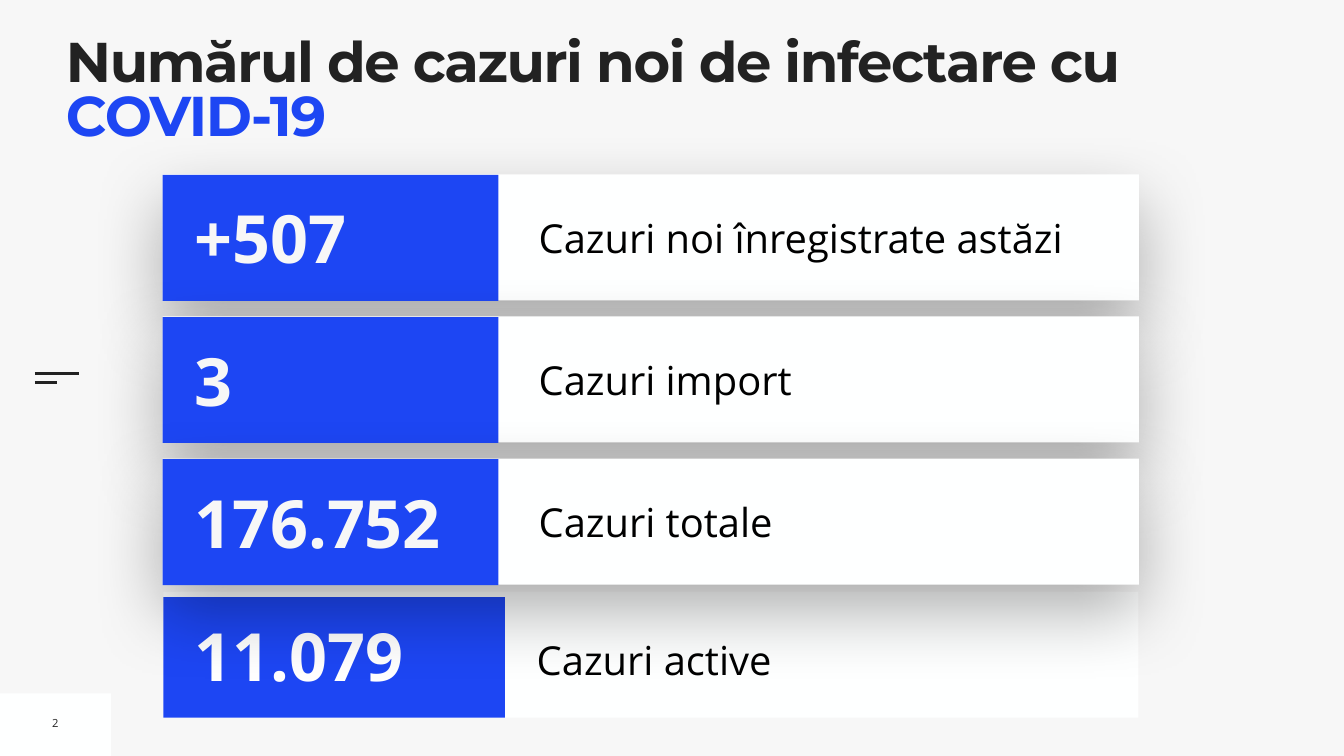
from dataclasses import dataclass

from lxml import etree
from pptx import Presentation
from pptx.dml.color import RGBColor
from pptx.enum.shapes import MSO_CONNECTOR, MSO_SHAPE
from pptx.enum.text import MSO_ANCHOR, MSO_AUTO_SIZE, PP_ALIGN
from pptx.oxml.ns import qn
from pptx.util import Emu, Pt

PX = 9144  # 100 px to the inch
RECT = MSO_SHAPE.RECTANGLE
STRAIGHT = MSO_CONNECTOR.STRAIGHT
MIDDLE, TOP = MSO_ANCHOR.MIDDLE, MSO_ANCHOR.TOP
GROW, FIXED = MSO_AUTO_SIZE.SHAPE_TO_FIT_TEXT, MSO_AUTO_SIZE.NONE
CENTER = PP_ALIGN.CENTER

COLORS = {
    "background": "F7F7F7",
    "white": "FFFFFF",
    "panel": "FEFFFF",
    "blue": "1D46F3",
    "dark": "222222",
    "black": "000000",
}
SHADOW = {"blurRad": Pt(100), "dist": Pt(40), "dir": 90 * 60000,
          "algn": "ctr", "rotWithShape": 0}
SHADOW_ALPHA = 30000


@dataclass(frozen=True)
class Box:
    left: int
    top: int
    width: int
    height: int

    def emu(self) -> list[Emu]:
        return [Emu(n * PX) for n in (self.left, self.top, self.width, self.height)]


@dataclass(frozen=True)
class Style:
    font: str
    size: int
    color: str
    bold: bool = False


@dataclass(frozen=True)
class CaseRow:
    value: str
    label: str
    panel: Box
    value_panel: Box
    value_box: Box
    label_box: Box
    value_color: str = "background"
    shadow: bool = True
    label_margin: int = 10
    label_format: tuple = ()


def rgb(name: str) -> RGBColor:
    return RGBColor.from_string(COLORS[name])


def add_panel(slide, box: Box, color: str, shadow: bool = False) -> None:
    panel = slide.shapes.add_shape(RECT, *box.emu())
    panel.shadow.inherit = False
    panel.fill.solid()
    panel.fill.fore_color.rgb = rgb(color)
    panel.line.fill.background()
    if shadow:
        effects = panel._element.spPr.find(qn("a:effectLst"))
        outer = etree.SubElement(effects, qn("a:outerShdw"),
                                 {key: str(int(v)) if key != "algn" else v
                                  for key, v in SHADOW.items()})
        tint = etree.SubElement(outer, qn("a:srgbClr"), val=COLORS["black"])
        etree.SubElement(tint, qn("a:alpha"), val=str(SHADOW_ALPHA))


def add_text(slide, box: Box, runs: list[tuple[str, Style]], margin: int = 10,
             anchor=MIDDLE, fit=GROW, wrap: bool = True,
             paragraph_format: tuple = (), spacing: int = 0) -> None:
    frame = slide.shapes.add_textbox(*box.emu()).text_frame
    inset = Emu(margin * PX)
    frame_format = {"word_wrap": wrap, "auto_size": fit, "vertical_anchor": anchor,
                    "margin_left": inset, "margin_right": inset,
                    "margin_top": inset, "margin_bottom": inset}
    for name, setting in frame_format.items():
        setattr(frame, name, setting)
    paragraph = frame.paragraphs[0]
    for name, setting in paragraph_format:
        setattr(paragraph, name, setting)
    for words, style in runs:
        run = paragraph.add_run()
        run.text = words
        font_format = {"name": style.font, "size": Pt(style.size), "bold": style.bold}
        for name, setting in font_format.items():
            setattr(run.font, name, setting)
        run.font.color.rgb = rgb(style.color)
        if spacing:
            run.font._element.set("spc", str(spacing * 100))


def add_rule(slide, left: int, right: int, y: int) -> None:
    rule = slide.shapes.add_connector(
        STRAIGHT, *[Emu(n * PX) for n in (left, y, right, y)])
    rule.line.color.rgb = rgb("dark")
    rule.line.width = Pt(3)
    etree.SubElement(rule._element.spPr, qn("a:effectLst"))


def standard_row(index: int, value: str, label: str) -> CaseRow:
    left, top = 323, 346 + 282 * index
    return CaseRow(value, label,
                   panel=Box(left, top, 1937, 250),
                   value_panel=Box(left, top + 1, 666, 250),
                   value_box=Box(left + 53, top + 35, 603, 180),
                   label_box=Box(left + 736, top + 67, 1176, 116))


def add_case_row(slide, row: CaseRow) -> None:
    add_panel(slide, row.panel, "panel", row.shadow)
    add_text(slide, row.label_box, [(row.label, Style("Open Sans", 57, "black"))],
             margin=row.label_margin, paragraph_format=row.label_format)
    add_panel(slide, row.value_panel, "blue")
    add_text(slide, row.value_box,
             [(row.value, Style("Open Sans", 95, row.value_color, True))])


def main() -> None:
    deck = Presentation()
    deck.slide_width, deck.slide_height = Emu(2667 * PX), Emu(1500 * PX)
    slide = deck.slides.add_slide(deck.slide_layouts[6])
    slide.background.fill.solid()
    slide.background.fill.fore_color.rgb = rgb("background")

    # Page number and side marks
    add_panel(slide, Box(0, 1376, 220, 124), "panel")
    add_rule(slide, 69, 157, 741)
    add_rule(slide, 69, 113, 759)
    add_text(slide, Box(93, 1409, 34, 51), [("2", Style("Open Sans", 16, "dark"))],
             wrap=False, paragraph_format=(("alignment", CENTER),))

    # Title
    add_text(slide, Box(131, 78, 2394, 158),
             [("Numărul de cazuri noi de infectare cu ",
               Style("Montserrat", 80, "dark", True)),
              ("COVID-19", Style("Montserrat", 80, "blue", True))],
             margin=0, anchor=TOP, fit=FIXED, spacing=-2,
             paragraph_format=(("line_spacing", 0.8),))

    # Active cases lie behind the shadow of the rows above
    add_case_row(slide, CaseRow(
        "11.079", "Cazuri active",
        panel=Box(324, 1174, 1935, 250),
        value_panel=Box(324, 1185, 678, 239),
        value_box=Box(377, 1209, 603, 180),
        label_box=Box(1065, 1232, 1158, 125),
        value_color="white", shadow=False, label_margin=0,
        label_format=(("line_spacing", 1.3), ("space_before", Pt(20)))))

    # Case rows
    cases = [("+507", "Cazuri noi înregistrate astăzi"),
             ("3", "Cazuri import"),
             ("176.752", "Cazuri totale")]
    for index, (value, label) in enumerate(cases):
        add_case_row(slide, standard_row(index, value, label))

    deck.save("out.pptx")


if __name__ == "__main__":
    main()
